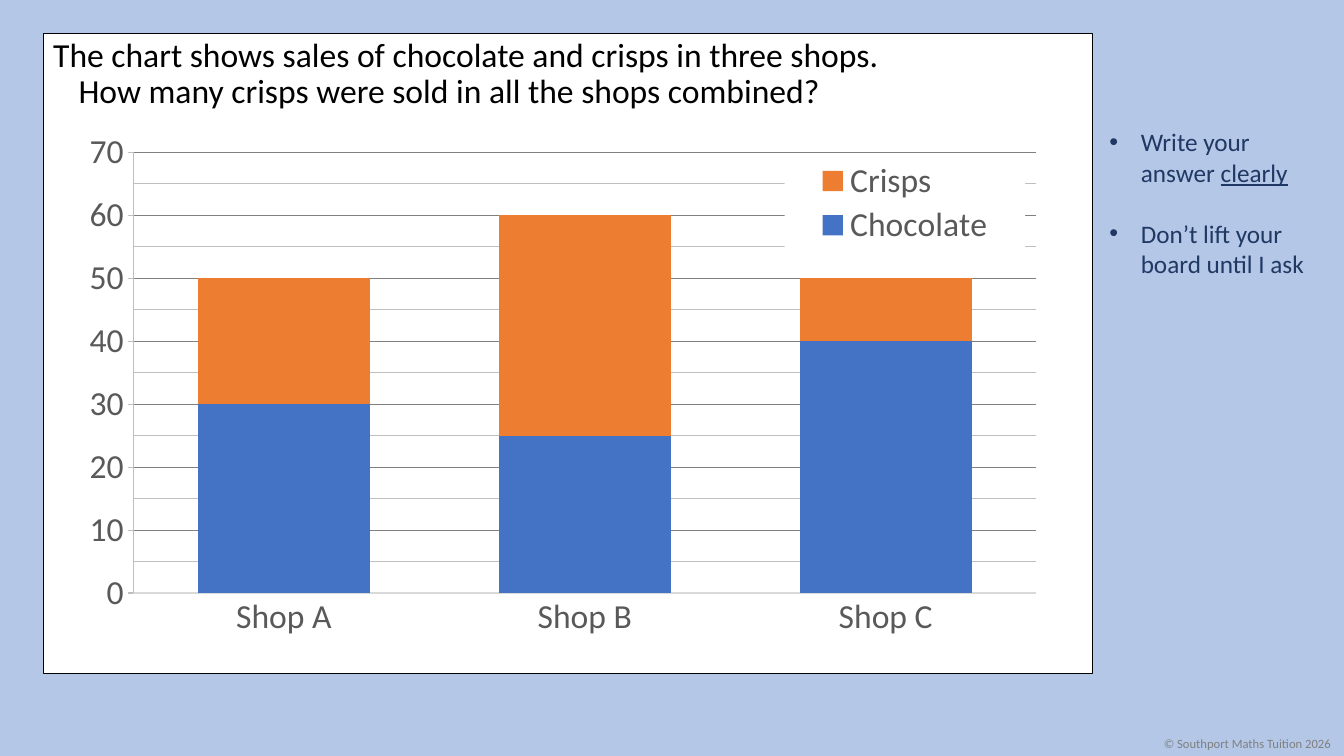
from dataclasses import dataclass

import pptx
import pptx.chart.data
import pptx.dml.color
import pptx.enum.chart
import pptx.enum.shapes
import pptx.enum.text
import pptx.oxml
import pptx.oxml.ns
import pptx.util
from pptx.util import Cm

rgb = pptx.dml.color.RGBColor.from_string


@dataclass(frozen=True)
class Theme:
    font: str = "Calibri"
    backdrop: str = "B4C7E7"
    panel: str = "FFFFFF"
    ink: str = "000000"
    reminder: str = "203864"
    muted: str = "808080"
    label: str = "595959"
    minor: str = "BFBFBF"
    baseline: str = "D9D9D9"
    chocolate: str = "4472C4"
    crisps: str = "ED7D31"
    body_size: int = 24
    reminder_size: int = 18
    copyright_size: int = 9


theme = Theme()


def style_font(font, size, colour):
    font.name = theme.font
    font.size = pptx.util.Pt(size)
    font.color.rgb = rgb(colour)


def set_layout(parent, index, target, x, y, w, h):
    for old in parent.findall(pptx.oxml.ns.qn("c:layout")):
        parent.remove(old)
    target_tag = f'<c:layoutTarget val="{target}"/>' if target else ""
    parent.insert(index, pptx.oxml.parse_xml(
        f'<c:layout {pptx.oxml.ns.nsdecls("c")}><c:manualLayout>{target_tag}'
        '<c:xMode val="edge"/><c:yMode val="edge"/>'
        f'<c:x val="{x}"/><c:y val="{y}"/><c:w val="{w}"/><c:h val="{h}"/>'
        '</c:manualLayout></c:layout>'))


deck = pptx.Presentation()
deck.slide_width = Cm(33.87)
deck.slide_height = Cm(19.05)
slide = deck.slides.add_slide(deck.slide_layouts[6])
slide.background.fill.solid()
slide.background.fill.fore_color.rgb = rgb(theme.backdrop)

panel_area = Cm(1.09), Cm(0.84), Cm(26.44), Cm(16.13)
panel = slide.shapes.add_shape(pptx.enum.shapes.MSO_SHAPE.RECTANGLE, *panel_area)
panel.shadow.inherit = False
panel.fill.solid()
panel.fill.fore_color.rgb = rgb(theme.panel)
panel.line.color.rgb = rgb(theme.ink)
panel.line.width = pptx.util.Pt(1)

reminders = slide.shapes.add_textbox(Cm(27.71), Cm(3.07), Cm(5.89), Cm(4.11)).text_frame
reminders.word_wrap = True
for number, wording in enumerate([
    [("Write your answer ", False), ("clearly", True)],
    [("Don’t lift your board until I ask", False)],
]):
    reminder = reminders.add_paragraph() if number else reminders.paragraphs[0]
    properties = reminder._p.get_or_add_pPr()
    properties.set("marL", str(Cm(0.79)))
    properties.set("indent", str(Cm(-0.79)))
    for bullet in ('<a:buFont {} typeface="Arial"/>', '<a:buChar {} char="•"/>'):
        properties.append(pptx.oxml.parse_xml(bullet.format(pptx.oxml.ns.nsdecls("a"))))
    if number:
        reminder.space_before = pptx.util.Pt(22)
    for words, underlined in wording:
        run = reminder.add_run()
        run.text = words
        style_font(run.font, theme.reminder_size, theme.reminder)
        run.font.underline = underlined

copyright_frame = slide.shapes.add_textbox(Cm(29.08), Cm(18.42), Cm(4.78), Cm(0.64)).text_frame
copyright_frame.word_wrap = False
copyright_run = copyright_frame.paragraphs[0].add_run()
copyright_run.text = "© Southport Maths Tuition 2026"
style_font(copyright_run.font, theme.copyright_size, theme.muted)

question_frame = slide.shapes.add_textbox(*panel_area).text_frame
question_frame.word_wrap = True
question = question_frame.paragraphs[0]
question.line_spacing = 0.9
question_properties = question._p.get_or_add_pPr()
question_properties.set("marL", str(Cm(0.64)))
question_properties.set("indent", str(Cm(-0.64)))
for position, sentence in enumerate([
    "The chart shows sales of chocolate and crisps in three shops.",
    "How many crisps were sold in all the shops combined?",
]):
    if position:
        question.add_line_break()
    run = question.add_run()
    run.text = sentence
    style_font(run.font, theme.body_size, theme.ink)

sales = pptx.chart.data.CategoryChartData()
sales.categories = ["Shop A", "Shop B", "Shop C"]
sales.add_series("Chocolate", [30, 25, 40])
sales.add_series("Crisps", [20, 35, 10])
chart = slide.shapes.add_chart(
    pptx.enum.chart.XL_CHART_TYPE.COLUMN_STACKED,
    Cm(1.47), Cm(3.15), Cm(25.25), Cm(13.59), sales).chart
chart.has_title = False
style_font(chart.font, theme.body_size, theme.label)

bars = chart.plots[0]
bars.gap_width = 75
bars.overlap = 100
bars.vary_by_categories = False
for product, colour in zip(bars.series, (theme.chocolate, theme.crisps)):
    product.format.fill.solid()
    product.format.fill.fore_color.rgb = rgb(colour)
    product.invert_if_negative = False

shops = chart.category_axis
shops.major_tick_mark = pptx.enum.chart.XL_TICK_MARK.NONE
quantity = chart.value_axis
quantity.major_tick_mark = pptx.enum.chart.XL_TICK_MARK.OUTSIDE
quantity.minimum_scale = 0
quantity.maximum_scale = 70
quantity.major_unit = 10
quantity.minor_unit = 5
quantity.has_major_gridlines = True
quantity.has_minor_gridlines = True
for axis in (shops, quantity):
    style_font(axis.tick_labels.font, theme.body_size, theme.label)
for ruled, colour in [
    (shops, theme.baseline),
    (quantity, theme.minor),
    (quantity.major_gridlines, theme.muted),
]:
    ruled.format.line.color.rgb = rgb(colour)
    ruled.format.line.width = pptx.util.Pt(0.75)

minor_gridlines = quantity._element.find(pptx.oxml.ns.qn("c:minorGridlines"))
minor_gridlines.append(pptx.oxml.parse_xml(
    f'<c:spPr {pptx.oxml.ns.nsdecls("c", "a")}><a:ln w="{pptx.util.Pt(0.75)}">'
    f'<a:solidFill><a:srgbClr val="{theme.minor}"/></a:solidFill></a:ln></c:spPr>'))

chart.has_legend = True
legend = chart.legend
legend.position = pptx.enum.chart.XL_LEGEND_POSITION.RIGHT
legend.include_in_layout = True
style_font(legend.font, theme.body_size, theme.label)
legend._element.find(pptx.oxml.ns.qn("c:txPr")).addprevious(pptx.oxml.parse_xml(
    f'<c:spPr {pptx.oxml.ns.nsdecls("c", "a")}><a:solidFill>'
    f'<a:srgbClr val="{theme.panel}"/></a:solidFill></c:spPr>'))

set_layout(chart._chartSpace.chart.plotArea, 0, "inner", 0.075, 0.051, 0.901, 0.817)
set_layout(legend._element, 1, None, 0.725, 0.06, 0.24, 0.17)

deck.save("out.pptx")
